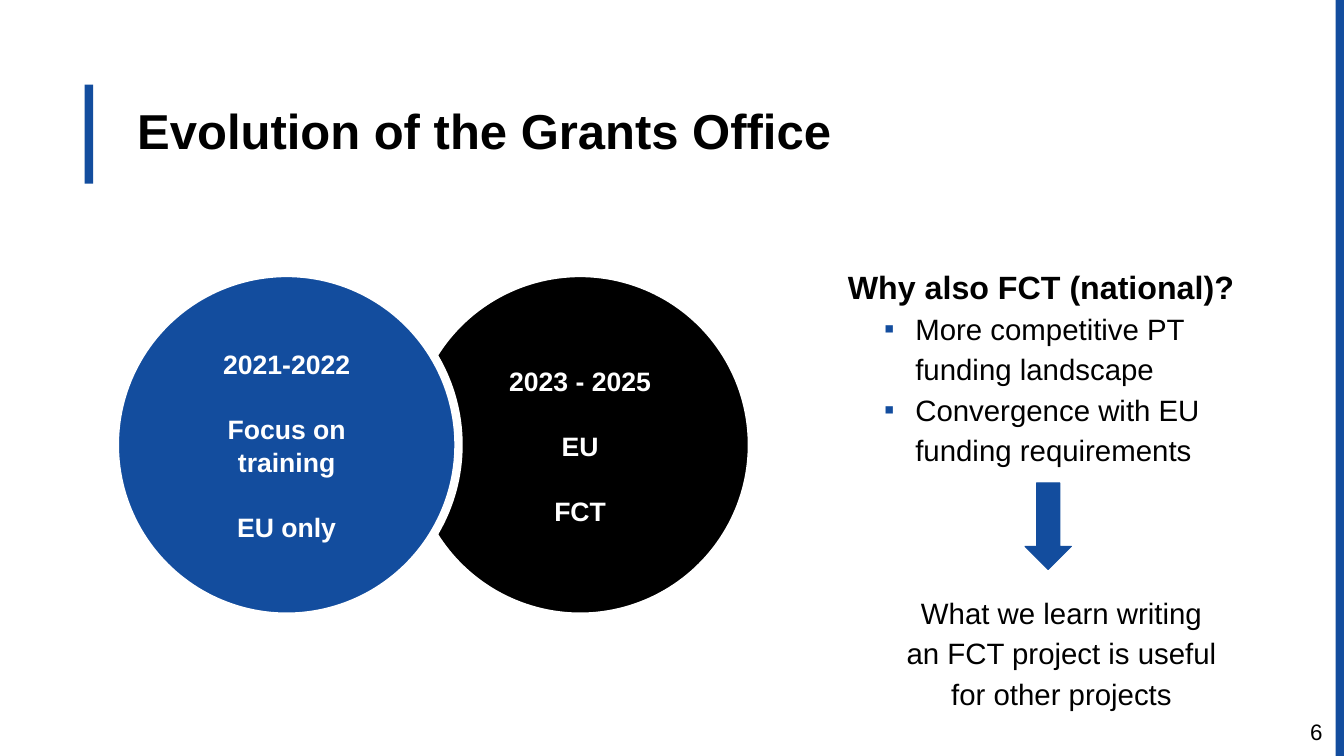
import pptx
import pptx.util
import pptx.dml.color
import pptx.enum.shapes
import pptx.enum.text
import pptx.oxml.ns
import lxml.etree

Pt = pptx.util.Pt
Kind = pptx.enum.shapes.MSO_SHAPE
Align = pptx.enum.text.PP_ALIGN
Anchor = pptx.enum.text.MSO_ANCHOR
COLORS = {"blue": "134D9E", "black": "000000", "white": "FFFFFF"}


def tint(name):
    return pptx.dml.color.RGBColor.from_string(COLORS[name])


class Deck:
    font = "Arial"

    def __init__(self, slide):
        self.slide = slide

    def shape(self, kind, box, fill, line=None, width=0):
        item = self.slide.shapes.add_shape(kind, *map(Pt, box))
        item.shadow.inherit = False
        item.fill.solid()
        item.fill.fore_color.rgb = tint(fill)
        if line:
            item.line.color.rgb = tint(line)
            item.line.width = Pt(width)
        else:
            item.line.fill.background()
        return item

    def frame(self, item, inset, anchor=Anchor.TOP):
        frame = item.text_frame
        frame.word_wrap = True
        frame.vertical_anchor = anchor
        frame.margin_left = frame.margin_right = Pt(inset)
        frame.margin_top = frame.margin_bottom = Pt(inset)
        return frame

    def box(self, box, inset, anchor=Anchor.TOP):
        return self.frame(self.slide.shapes.add_textbox(*map(Pt, box)), inset, anchor)

    def para(self, frame, text, size, color="black", bold=False,
             align=Align.LEFT, lead=1.0, gap=0, left=0, hang=0, bullet=None):
        """Fill the first paragraph if it is still empty, else add one."""
        para = frame.paragraphs[0]
        if para.runs:
            para = frame.add_paragraph()
        para.alignment = align
        para.line_spacing = lead
        para.space_before = Pt(gap)
        props = para._p.get_or_add_pPr()
        props.set("marL", str(Pt(left)))
        props.set("indent", str(Pt(-hang)))
        if bullet:
            qn = pptx.oxml.ns.qn
            hue = lxml.etree.SubElement(props, qn("a:buClr"))
            lxml.etree.SubElement(hue, qn("a:srgbClr"), val=COLORS["blue"])
            lxml.etree.SubElement(props, qn("a:buFont"), typeface=self.font)
            lxml.etree.SubElement(props, qn("a:buChar"), char=bullet)
        run = para.add_run()
        run.text = text
        run.font.name = self.font
        run.font.size = Pt(size)
        run.font.bold = bold
        run.font.color.rgb = tint(color)

    def circle(self, left, fill, lines):
        disc = self.shape(Kind.OVAL, (left, 195, 245.5, 245.5), fill, "white", 6)
        frame = self.frame(disc, 9.4, Anchor.MIDDLE)
        for i, line in enumerate(lines):
            self.para(frame, line, 19, "white", True, Align.CENTER,
                      lead=1.04, gap=22.7 if i else 0)


def main():
    show = pptx.Presentation()
    show.slide_width, show.slide_height = Pt(960), Pt(540)
    deck = Deck(show.slides.add_slide(show.slide_layouts[6]))

    deck.shape(Kind.RECTANGLE, (60.5, 60.5, 6, 70.7), "blue")
    deck.shape(Kind.RECTANGLE, (954, 0, 6, 540), "blue")
    title = deck.box((88.6, 62.6, 552, 90), 9.4)
    deck.para(title, "Evolution of the Grants Office", 35, bold=True)

    deck.circle(291.6, "black", ["2023 - 2025", "EU", "FCT"])
    deck.circle(82, "blue", ["2021-2022", "Focus on training", "EU only"])

    why = deck.box((596.2, 177.1, 305.3, 149), 9.4)
    deck.para(why, "Why also FCT (national)?", 23, bold=True, lead=1.15)
    for point in ("More competitive PT funding landscape",
                  "Convergence with EU funding requirements"):
        deck.para(why, point, 21, lead=1.15, left=48.2, hang=22.3, bullet="▪")

    deck.shape(Kind.DOWN_ARROW, (732.2, 344.9, 33.1, 61.9), "blue", "blue", 0.75)
    gain = deck.box((604.1, 414, 272.2, 90), 7.2)
    deck.para(gain, "What we learn writing an FCT project is useful for other projects",
              21, align=Align.CENTER, lead=1.15, left=36)

    page = deck.box((907.2, 506.9, 44.6, 33.1), 7.2, Anchor.MIDDLE)
    deck.para(page, "6", 16, align=Align.RIGHT, lead=0.93)

    show.save("out.pptx")


if __name__ == "__main__":
    main()
